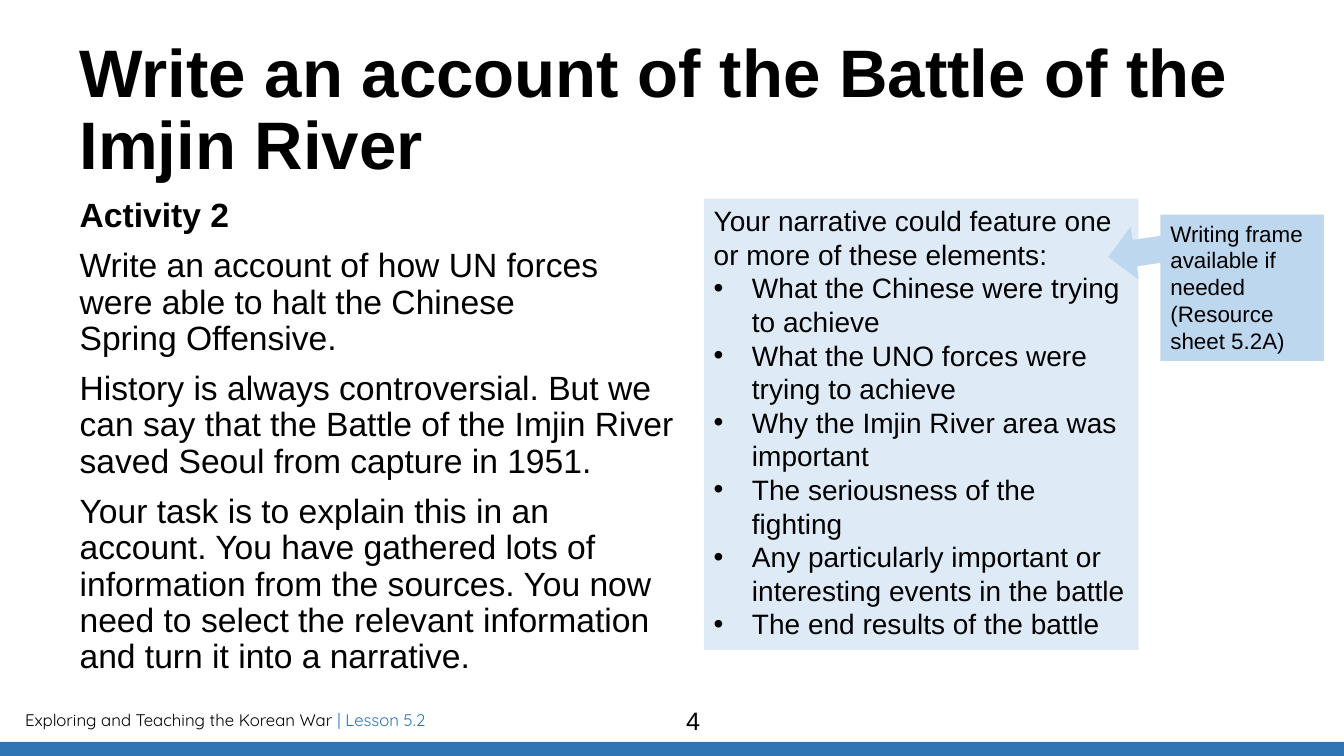
from dataclasses import dataclass

from lxml.etree import SubElement
from pptx import Presentation
from pptx.dml.color import RGBColor
from pptx.enum.shapes import MSO_SHAPE
from pptx.enum.text import MSO_ANCHOR, PP_ALIGN
from pptx.oxml.ns import qn
from pptx.util import Inches, Pt

BLACK = RGBColor(0x00, 0x00, 0x00)
BLUE = RGBColor(0x2E, 0x75, 0xB6)
PALE = RGBColor(0xDE, 0xEB, 0xF7)
SKY = RGBColor(0xBD, 0xD7, 0xEE)


@dataclass
class Box:
    left: float
    top: float
    width: float
    height: float

    def place(self) -> tuple:
        return tuple(Inches(v) for v in (self.left, self.top, self.width, self.height))


@dataclass
class Block:
    """Filled shape, with text if any."""
    box: Box
    fill: RGBColor
    lines: tuple = ()
    size: int = 20
    kind: MSO_SHAPE = MSO_SHAPE.RECTANGLE
    turn: float = 0


@dataclass
class Label:
    """Text without a fill."""
    box: Box
    lines: tuple
    size: int
    inset: bool = True
    space: float = 1.0
    before: int = 0
    align: PP_ALIGN = PP_ALIGN.LEFT


TASKS = (
    "Activity 2",
    "Write an account of how UN forces \vwere able to halt the Chinese \vSpring Offensive.",
    "History is always controversial. But we can say that the Battle of the "
    "Imjin River saved Seoul from capture in 1951.",
    "Your task is to explain this in an account. You have gathered lots of "
    "information from the sources. You now need to select the relevant "
    "information and turn it into a narrative.",
)
POINTS = (
    "Your narrative could feature one or more of these elements:",
    "What the Chinese were trying to achieve",
    "What the UNO forces were trying to achieve",
    "Why the Imjin River area was important",
    "The seriousness of the fighting",
    "Any particularly important or interesting events in the battle",
    "The end results of the battle",
)

BAR = Block(Box(0, 7.36, 13.33, 0.15), BLUE)
PANEL = Block(Box(6.98, 1.97, 4.31, 4.48), PALE, POINTS)
ARROW = Block(Box(11.27, 1.92, 0.53, 1.1), SKY, kind=MSO_SHAPE.DOWN_ARROW, turn=81.6)
NOTE = Block(Box(11.51, 2.13, 1.62, 1.45), SKY,
             ("Writing frame available if needed (Resource sheet 5.2A)",), 16)

TITLE = Label(Box(0.79, 0.39, 12.16, 1.45),
              ("Write an account of the Battle of the Imjin River",), 48, False, 0.9)
BODY = Label(Box(0.79, 1.97, 5.97, 4.76), TASKS, 24, False, 0.9, 10)
FOOT = Label(Box(0.15, 6.99, 4.35, 0.3), ("Exploring and Teaching the Korean War ",), 12)
PAGE = Label(Box(4.34, 6.95, 5.07, 0.4), ("4",), 18, align=PP_ALIGN.CENTER)


def style(run, size: int, face: str = "Arial", color: RGBColor = BLACK) -> None:
    run.font.name = face
    run.font.size = Pt(size)
    run.font.color.rgb = color


def write(frame, lines: tuple, size: int) -> None:
    frame.word_wrap = True
    for i, line in enumerate(lines):
        para = frame.paragraphs[0] if i == 0 else frame.add_paragraph()
        para.text = line
        para.alignment = PP_ALIGN.LEFT
        for run in para.runs:
            style(run, size)


def bullet(para) -> None:
    props = para._p.get_or_add_pPr()
    props.set("marL", str(Inches(0.38)))
    props.set("indent", str(-Inches(0.38)))
    SubElement(props, qn("a:buFont")).set("typeface", "Arial")
    SubElement(props, qn("a:buChar")).set("char", "•")


def block(slide, item: Block):
    shape = slide.shapes.add_shape(item.kind, *item.box.place())
    shape.shadow.inherit = False
    shape.fill.solid()
    shape.fill.fore_color.rgb = item.fill
    shape.line.fill.background()
    shape.rotation = item.turn
    if item.lines:
        write(shape.text_frame, item.lines, item.size)
        shape.text_frame.vertical_anchor = MSO_ANCHOR.TOP
    return shape.text_frame


def label(slide, item: Label):
    frame = slide.shapes.add_textbox(*item.box.place()).text_frame
    write(frame, item.lines, item.size)
    if not item.inset:
        frame.margin_left = frame.margin_right = 0
        frame.margin_top = frame.margin_bottom = 0
    for i, para in enumerate(frame.paragraphs):
        para.alignment = item.align
        para.line_spacing = item.space
        if i:
            para.space_before = Pt(item.before)
    return frame


def main() -> None:
    deck = Presentation()
    deck.slide_width, deck.slide_height = Inches(13.33), Inches(7.5)
    slide = deck.slides.add_slide(deck.slide_layouts[6])

    # Footer
    para = label(slide, FOOT).paragraphs[0]
    tail = para.add_run()
    tail.text = "| Lesson 5.2"
    for run, color in zip(para.runs, (BLACK, BLUE)):
        style(run, FOOT.size, "Quicksand", color)
    block(slide, BAR)

    # Elements panel and its arrow
    for para in block(slide, PANEL).paragraphs[1:]:
        bullet(para)
    block(slide, ARROW)

    # Title and task
    for item in (TITLE, BODY):
        label(slide, item).paragraphs[0].runs[0].font.bold = True

    # Resource note and page number
    block(slide, NOTE)
    label(slide, PAGE)

    deck.save("out.pptx")


if __name__ == "__main__":
    main()
